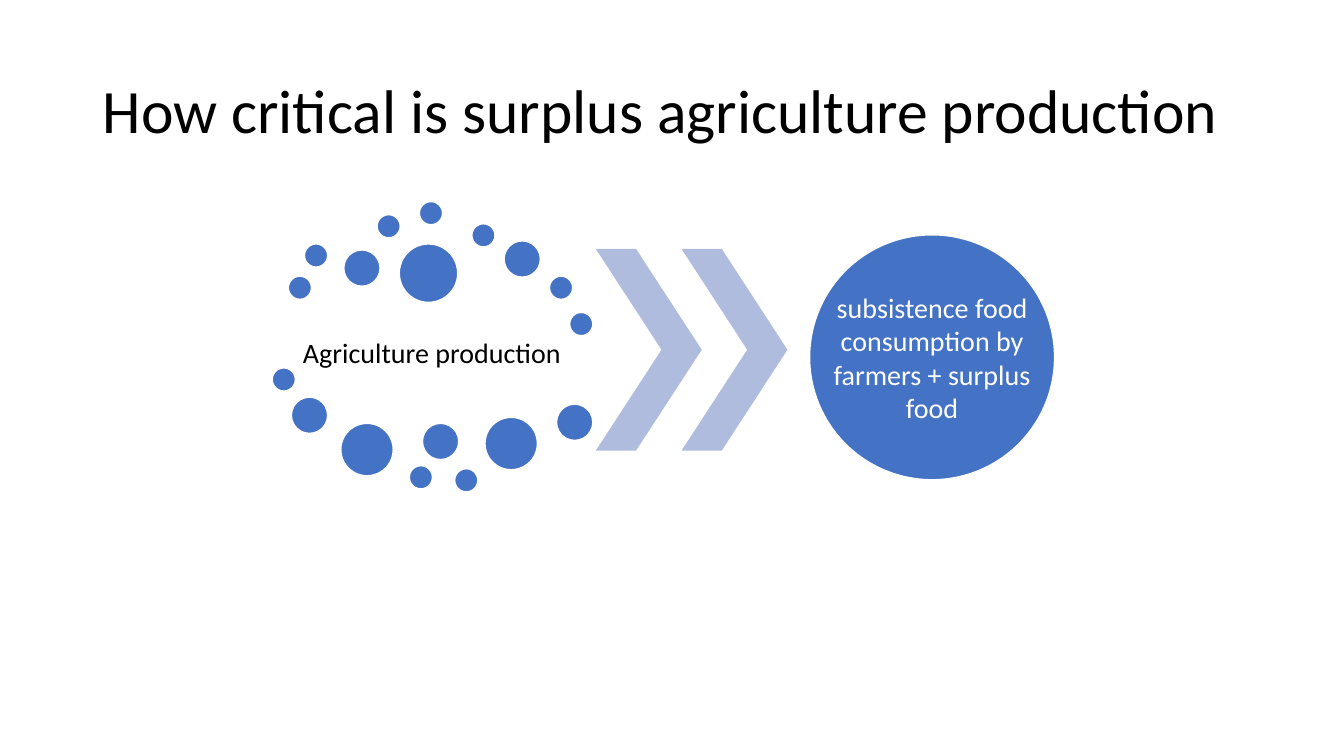
from typing import NamedTuple

from pptx import Presentation
from pptx import util as u
from pptx.dml.color import RGBColor
from pptx.enum import shapes, text

PX = 9144  # EMU per px, 100 px to the inch
BLUE, PALE, WHITE, BLACK = "4472C4", "B0BCDE", "FFFFFF", "000000"
SMALL, MID, LARGE, HUGE = 23, 36, 52, 58  # dot diameters


class Box(NamedTuple):
    left: int
    top: int
    width: int
    height: int

    def emu(self) -> list[int]:
        return [v * PX for v in self]


class Dot(NamedTuple):
    left: int
    top: int
    size: int = SMALL


DOTS = [
    # Upper arc
    Dot(286, 274), Dot(302, 242), Dot(341, 248, MID), Dot(374, 213),
    Dot(416, 200), Dot(468, 222), Dot(500, 239, MID), Dot(545, 274),
    Dot(565, 310), Dot(396, 242, HUGE),
    # Lower arc
    Dot(270, 365), Dot(289, 394, MID), Dot(338, 420, LARGE), Dot(406, 462),
    Dot(419, 420, MID), Dot(451, 465), Dot(481, 414, LARGE), Dot(552, 401, MID),
]
CHEVRONS = [Box(left, 247, 105, 200) for left in (591, 676)]
TITLE = Box(92, 40, 1150, 145)
LABEL = Box(289, 303, 285, 94)
RESULT = Box(803, 233, 243, 243)


def paint(color: str) -> RGBColor:
    return RGBColor.from_string(color)


def write(shape, words: str, *, size: int, color: str, inset: tuple[int, int],
          align=text.PP_ALIGN.CENTER, leading: float = 1.0) -> None:
    frame = shape.text_frame
    frame.word_wrap = True
    frame.auto_size = text.MSO_AUTO_SIZE.NONE
    frame.vertical_anchor = text.MSO_ANCHOR.MIDDLE
    frame.margin_left = frame.margin_right = inset[0] * PX
    frame.margin_top = frame.margin_bottom = inset[1] * PX
    para = frame.paragraphs[0]
    para.alignment, para.line_spacing = align, leading
    run = para.add_run()
    run.text = words
    run.font.name, run.font.size = "Calibri", u.Pt(size)
    run.font.color.rgb = paint(color)


def draw(slide, kind, box: Box, fill: str, line: str | None = None):
    shape = slide.shapes.add_shape(kind, *box.emu())
    shape.shadow.inherit = False
    shape.fill.solid()
    shape.fill.fore_color.rgb = paint(fill)
    if line:
        shape.line.color.rgb = paint(line)
        shape.line.width = u.Pt(1)
    else:
        shape.line.fill.background()
    return shape


def main() -> None:
    deck = Presentation()
    deck.slide_width, deck.slide_height = 1333 * PX, 750 * PX
    slide = deck.slides.add_slide(deck.slide_layouts[5])
    kinds = shapes.MSO_SHAPE

    # Title
    title = slide.shapes.title
    title.left, title.top, title.width, title.height = TITLE.emu()
    write(title, "How critical is surplus agriculture production", size=44,
          color=BLACK, inset=(10, 5), align=text.PP_ALIGN.LEFT, leading=0.9)

    # Source: label ringed by dots
    write(slide.shapes.add_textbox(*LABEL.emu()), "Agriculture production ",
          size=20, color=BLACK, inset=(3, 3))
    for dot in DOTS:
        draw(slide, kinds.OVAL, Box(dot.left, dot.top, dot.size, dot.size),
             BLUE, WHITE)

    # Chevrons
    for box in CHEVRONS:
        draw(slide, kinds.CHEVRON, box, PALE).adjustments[0] = 0.62

    # Result: disc with text as wide as the disc
    draw(slide, kinds.OVAL, RESULT, BLUE, WHITE)
    write(slide.shapes.add_textbox(*RESULT.emu()),
          "subsistence food consumption by farmers + surplus food",
          size=20, color=WHITE, inset=(0, 0))

    deck.save("out.pptx")


if __name__ == "__main__":
    main()
